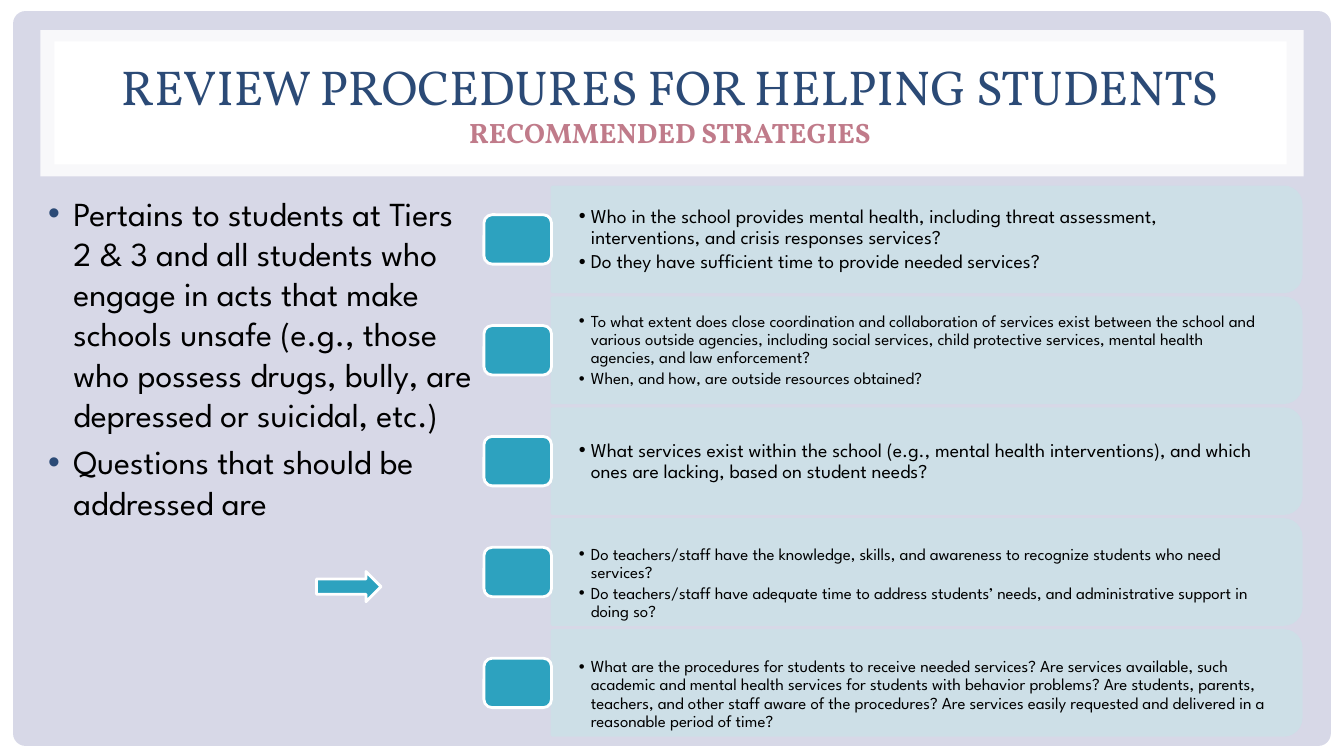
from lxml.etree import SubElement
from pptx import Presentation
from pptx.dml.color import RGBColor
from pptx.enum.shapes import MSO_SHAPE as Shape
from pptx.enum.text import MSO_ANCHOR as Anchor, PP_ALIGN as Align
from pptx.oxml.ns import qn
from pptx.util import Pt

PX = 9144
WHITE = RGBColor(0xFF, 0xFF, 0xFF)
BLACK = RGBColor(0x00, 0x00, 0x00)
LAVENDER = RGBColor(0xD7, 0xD8, 0xE7)
NAVY = RGBColor(0x2B, 0x4A, 0x76)
ROSE = RGBColor(0xC0, 0x7B, 0x8A)
TEAL = RGBColor(0x2D, 0xA2, 0xBF)
PALE = RGBColor(0xCD, 0xE0, 0xE8)
SERIF = "Vollkorn"
SANS = "League Spartan"

PANEL_MIDDLE = 238
PANEL_PITCH = 110

INTRO = [
    "Pertains to students at Tiers 2 & 3 and all students who engage in acts that make schools "
    "unsafe (e.g., those who possess drugs, bully, are depressed or suicidal, etc.)",
    "Questions that should be addressed are",
]
# size, downward shift, questions
QUESTIONS = [
    (14, 0, [
        "Who in the school provides mental health, including threat assessment, interventions, "
        "and crisis responses services?",
        "Do they have sufficient time to provide needed services?"]),
    (12, 0, [
        "To what extent does close coordination and collaboration of services exist between the "
        "school and various outside agencies, including social services, child protective "
        "services, mental health agencies, and law enforcement?",
        "When, and how, are outside resources obtained?"]),
    (14, 0, [
        "What services exist within the school (e.g., mental health interventions), and which "
        "ones are lacking, based on student needs?"]),
    (12, 11, [
        "Do teachers/staff have the knowledge, skills, and awareness to recognize students who "
        "need services?",
        "Do teachers/staff have adequate time to address students’ needs, and administrative "
        "support in doing so?"]),
    (12, 11, [
        "What are the procedures for students to receive needed services? Are services "
        "available, such academic and mental health services for students with behavior "
        "problems? Are students, parents, teachers, and other staff aware of the procedures? "
        "Are services easily requested and delivered in a reasonable period of time?"]),
]


def px(*lengths):
    return [n * PX for n in lengths]


def set_alpha(fill_parent, percent):
    color = fill_parent.find(qn("a:solidFill"))[0]
    SubElement(color, qn("a:alpha")).set("val", str(percent * 1000))


def add_box(slide, kind, box, fill, line=None, alpha=None, adj=None, turn=0):
    sp = slide.shapes.add_shape(kind, *px(*box))
    sp.shadow.inherit = False
    sp.rotation = turn
    sp.fill.solid()
    sp.fill.fore_color.rgb = fill
    if line is None:
        sp.line.fill.background()
    else:
        sp.line.color.rgb = line
        sp.line.width = Pt(2)
    if alpha:
        set_alpha(sp.element.spPr, alpha)
        if line is not None:
            set_alpha(sp.line._get_or_add_ln(), alpha)
    if adj is not None:
        sp.adjustments[0] = adj
    return sp


def add_frame(slide, box, inset=(10, 5), anchor=Anchor.TOP):
    tf = slide.shapes.add_textbox(*px(*box)).text_frame
    tf.word_wrap = True
    tf.vertical_anchor = anchor
    tf.margin_left = tf.margin_right = inset[0] * PX
    tf.margin_top = tf.margin_bottom = inset[1] * PX
    return tf


def add_run(p, text, font=SANS, size=12, color=BLACK, bold=False):
    r = p.add_run()
    r.text = text
    r.font.name = font
    r.font.size = Pt(size)
    r.font.color.rgb = color
    r.font.bold = bold


def add_bullets(tf, items, size, margin, hang, color=BLACK, before=0, after=0, spacing=1.0):
    for i, item in enumerate(items):
        p = tf.add_paragraph() if i else tf.paragraphs[0]
        p.space_before, p.space_after = Pt(before), Pt(after)
        p.line_spacing = spacing
        pPr = p._p.get_or_add_pPr()
        pPr.set("marL", str(margin * PX))
        pPr.set("indent", str(-hang * PX))
        SubElement(SubElement(pPr, qn("a:buClr")), qn("a:srgbClr")).set("val", str(color))
        SubElement(pPr, qn("a:buFont")).set("typeface", "Arial")
        SubElement(pPr, qn("a:buChar")).set("char", "•")
        add_run(p, item, size=size)


def add_title(slide):
    tf = add_frame(slide, (62, 45, 1205, 114), anchor=Anchor.MIDDLE)
    p = tf.paragraphs[0]
    p.alignment = Align.CENTER
    add_run(p, "REVIEW PROCEDURES FOR HELPING STUDENTS", font=SERIF, size=35, color=NAVY)
    p.add_line_break()
    add_run(p, "RECOMMENDED STRATEGIES", font=SERIF, size=20, color=ROSE, bold=True)


def add_panel(slide, middle, size, shift, items):
    add_box(slide, Shape.ROUND_2_SAME_RECTANGLE, (867, middle - 372, 104, 743), PALE,
            line=PALE, alpha=90, turn=90)
    tf = add_frame(slide, (547, middle - 47 + shift, 738, 94), (27, 14), Anchor.MIDDLE)
    add_bullets(tf, items, size, 12, 12, after=2, spacing=0.9)
    add_box(slide, Shape.ROUNDED_RECTANGLE, (480, middle - 25, 67, 49), TEAL, line=WHITE)


def main():
    prs = Presentation()
    prs.slide_width, prs.slide_height = px(1333, 750)
    slide = prs.slides.add_slide(prs.slide_layouts[6])
    slide.background.fill.solid()
    slide.background.fill.fore_color.rgb = LAVENDER

    add_box(slide, Shape.RECTANGLE, (0, 0, 1333, 750), WHITE)
    add_box(slide, Shape.ROUNDED_RECTANGLE, (13, 11, 1307, 729), LAVENDER, adj=0.017)
    add_box(slide, Shape.RECTANGLE, (40, 30, 1253, 145), WHITE, alpha=83)
    add_box(slide, Shape.RECTANGLE, (54, 41, 1222, 122), WHITE)
    add_title(slide)

    intro = add_frame(slide, (25, 186, 458, 503))
    add_bullets(intro, INTRO, 24, 38, 25, color=NAVY, before=5)
    for i, (size, shift, items) in enumerate(QUESTIONS):
        add_panel(slide, PANEL_MIDDLE + i * PANEL_PITCH, size, shift, items)
    add_box(slide, Shape.RIGHT_ARROW, (314, 567, 64, 30), TEAL, line=WHITE)

    prs.save("out.pptx")


if __name__ == "__main__":
    main()
